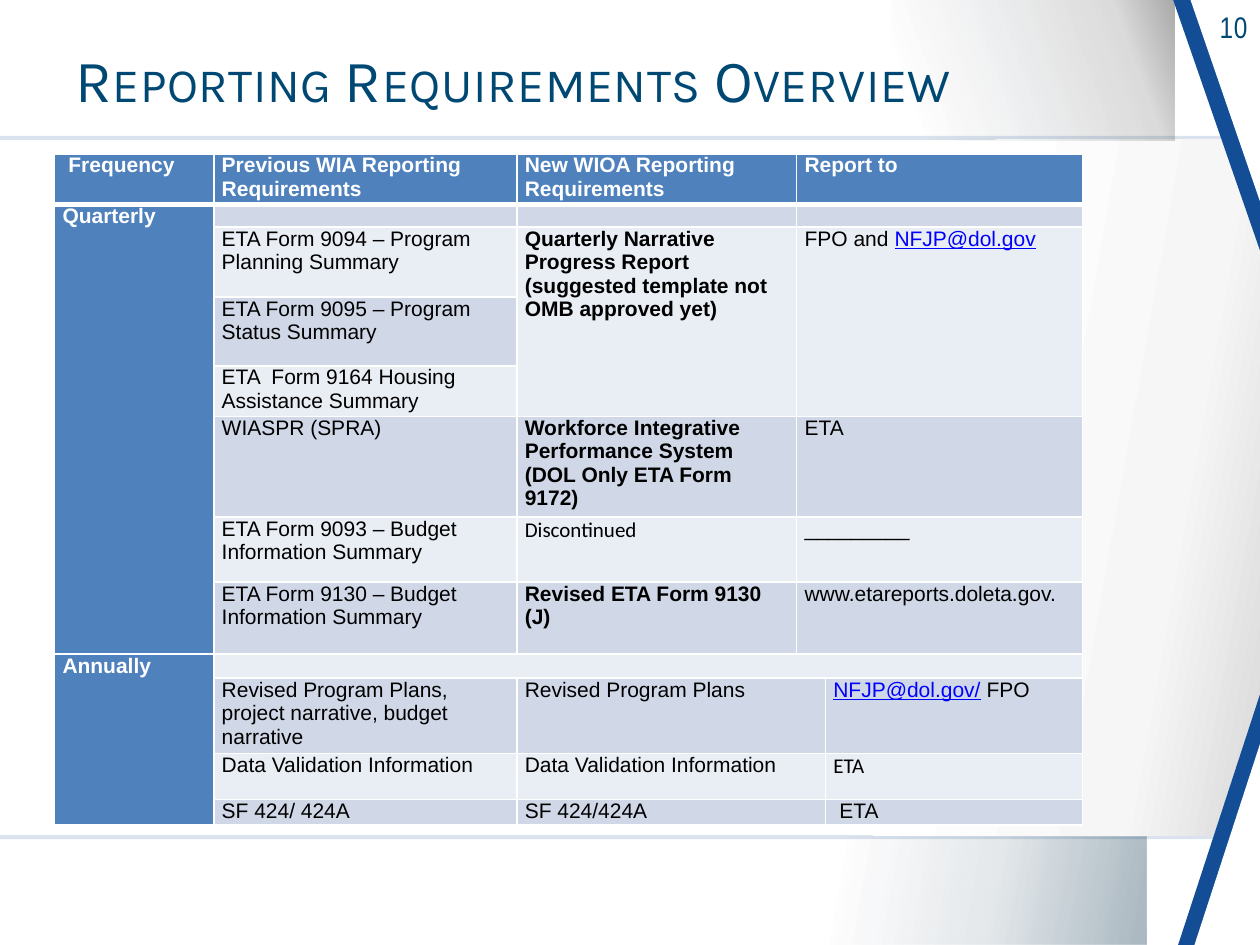
from dataclasses import dataclass

from pptx import Presentation
from pptx.dml.color import RGBColor as RGB
from pptx.enum.shapes import MSO_SHAPE as SHP
from pptx.enum.text import MSO_ANCHOR as ANC, PP_ALIGN as AL
from pptx.oxml import parse_xml
from pptx.oxml.ns import nsdecls
from pptx.util import Cm, Pt


@dataclass(frozen=True)
class Theme:
    ink: str = "004874"
    stripe: str = "124D95"
    rule: str = "275A99"
    head: str = "4F81BD"
    bands: tuple = ("E9EDF4", "D0D8E8")
    link: str = "0000FF"
    white: str = "FFFFFF"
    black: str = "000000"
    title_font: str = "Karla"
    number_font: str = "Arial Narrow"
    body_font: str = "Arial"
    alt_font: str = "Calibri"
    title: float = 34.2
    number: float = 17
    body: float = 12
    empty: float = 10


class Deck:
    def __init__(self, theme, slide):
        self.t = theme
        self.s = slide

    def shape(self, kind, box, color=None):
        sp = self.s.shapes.add_shape(kind, *map(Cm, box))
        sp.shadow.inherit = False
        sp.line.fill.background()
        if color:
            sp.fill.solid()
            sp.fill.fore_color.rgb = RGB.from_string(color)
        return sp

    def rule_band(self, box, opacity):
        sp = self.shape(SHP.RECTANGLE, box)
        self.gradient(sp, [(0, self.t.rule, opacity), (100, self.t.rule, opacity)], 0)

    def gradient(self, sp, stops, angle):
        gs = "".join(
            f'<a:gs pos="{pos * 1000}"><a:srgbClr val="{color}">'
            f'<a:alpha val="{alpha * 1000}"/></a:srgbClr></a:gs>'
            for pos, color, alpha in stops)
        sp.fill.background()
        old = sp._element.spPr.find("{*}noFill")
        old.getparent().replace(old, parse_xml(
            f'<a:gradFill {nsdecls("a")} rotWithShape="1"><a:gsLst>{gs}</a:gsLst>'
            f'<a:lin ang="{angle * 60000}" scaled="0"/></a:gradFill>'))

    def panel(self, box, stops, angle):
        self.gradient(self.shape(SHP.RECTANGLE, box), stops, angle)

    def corner(self, box, color, flip=False):
        sp = self.shape(SHP.ISOSCELES_TRIANGLE, box, color)
        sp.adjustments[0] = 1
        if flip:
            sp._element.spPr.xfrm.set("flipV", "1")

    def run(self, p, text, size, font, color, bold=False, underline=False):
        r = p.add_run()
        r.text = text
        f = r.font
        f.size, f.name, f.bold, f.underline = Pt(size), font, bold, underline
        f.color.rgb = RGB.from_string(color)
        return r

    def text(self, box, text, size, font, align=AL.LEFT, anchor=ANC.TOP,
             spacing=1.0, caps=False):
        tf = self.s.shapes.add_textbox(*map(Cm, box)).text_frame
        tf.word_wrap = True
        tf.vertical_anchor = anchor
        p = tf.paragraphs[0]
        p.alignment, p.line_spacing = align, spacing
        rpr = self.run(p, text, size, font, self.t.ink).font._element
        rpr.set("spc", "40")
        if caps:
            rpr.set("cap", "small")

    def borders(self, cell, top, bottom):
        tcpr = cell._tc.get_or_add_tcPr()
        for side, width in (("L", 1), ("R", 1), ("T", top), ("B", bottom)):
            tcpr.append(parse_xml(
                f'<a:ln{side} {nsdecls("a")} w="{Pt(width)}"><a:solidFill>'
                f'<a:srgbClr val="{self.t.white}"/></a:solidFill></a:ln{side}>'))

    def cell(self, cell, row, col, runs, indent):
        t = self.t
        heading = row == 0 or col == 0
        self.borders(cell, 3 if row == 1 else 1, 3 if row == 0 else 1)
        cell.fill.solid()
        cell.fill.fore_color.rgb = RGB.from_string(t.head if heading else t.bands[row % 2])
        cell.margin_left, cell.margin_right = Cm(0.16 + indent), Cm(0.16)
        cell.margin_top = cell.margin_bottom = 0
        p = cell.text_frame.paragraphs[0]
        if not runs:
            p._p.get_or_add_endParaRPr().set("sz", str(t.empty * 100))
        for text, style in runs:
            color = t.white if heading else t.link if style == "link" else t.black
            self.run(p, text, t.body, t.alt_font if style == "alt" else t.body_font,
                     color, heading or style == "bold", style == "link")

    def table(self, left, top, widths, heights, spans, content, indents):
        tbl = self.s.shapes.add_table(
            len(heights), len(widths), Cm(left), Cm(top),
            Cm(sum(widths)), Cm(sum(heights))).table
        tbl.horz_banding = False
        for column, width in zip(tbl.columns, widths):
            column.width = Cm(width)
        for row, height in zip(tbl.rows, heights):
            row.height = Cm(height)
        for i in range(len(heights)):
            for j in range(len(widths)):
                runs = content.get((i, j), [])
                if isinstance(runs, str):
                    runs = [(runs, "plain")]
                self.cell(tbl.cell(i, j), i, j, runs, indents.get((i, j), 0))
        for first, last in spans:
            tbl.cell(*first).merge(tbl.cell(*last))


COLUMNS = [3.21, 6.11, 5.64, 0.58, 5.18]
ROWS = [0.95, 0.46, 1.41, 1.39, 0.95, 1.89, 1.31, 1.45, 0.48, 1.43, 0.93, 0.46]
SPANS = ([((i, 3), (i, 4)) for i in (0, 1, 5, 6, 7)]
         + [((i, 2), (i, 3)) for i in (9, 10, 11)]
         + [((1, 0), (7, 0)), ((8, 0), (11, 0)), ((8, 1), (8, 4)),
            ((2, 2), (4, 2)), ((2, 3), (4, 4))])
CONTENT = {
    (0, 0): "Frequency",
    (0, 1): "Previous WIA Reporting Requirements",
    (0, 2): "New WIOA Reporting Requirements",
    (0, 3): "Report to",
    (1, 0): "Quarterly",
    (2, 1): "ETA Form 9094 – Program Planning Summary",
    (2, 2): [("Quarterly Narrative Progress Report "
              "(suggested template not OMB approved yet)", "bold")],
    (2, 3): [("FPO and ", "plain"), ("NFJP@dol.gov", "link")],
    (3, 1): "ETA Form 9095 – Program Status Summary",
    (4, 1): "ETA  Form 9164 Housing Assistance Summary",
    (5, 1): "WIASPR (SPRA)",
    (5, 2): [("Workforce Integrative Performance System "
              "(DOL Only ETA Form 9172)", "bold")],
    (5, 3): "ETA",
    (6, 1): "ETA Form 9093 – Budget Information Summary",
    (6, 2): [("Discontinued", "alt")],
    (6, 3): "_________",
    (7, 1): "ETA Form 9130 – Budget Information Summary",
    (7, 2): [("Revised ETA Form 9130 (J)", "bold")],
    (7, 3): "www.etareports.doleta.gov.",
    (8, 0): "Annually",
    (9, 1): "Revised Program Plans, project narrative, budget narrative",
    (9, 2): "Revised Program Plans",
    (9, 4): [("NFJP@dol.gov/", "link"), (" FPO", "plain")],
    (10, 1): "Data Validation Information",
    (10, 2): "Data Validation Information",
    (10, 4): [("ETA", "alt")],
    (11, 1): "SF 424/ 424A",
    (11, 2): "SF 424/424A",
    (11, 4): "ETA",
}
INDENTS = {(0, 0): 0.12, (11, 4): 0.12}


def main():
    prs = Presentation()
    prs.slide_width, prs.slide_height = Cm(25.4), Cm(19.05)
    t = Theme()
    d = Deck(t, prs.slides.add_slide(prs.slide_layouts[6]))

    d.rule_band((0, 2.74, 25.4, 14.18), 16)
    d.panel((0, 2.82, 25.4, 14.02),
            [(0, t.white, 100), (72, t.white, 100), (90, "F6F6F6", 100),
             (100, "D9D9D9", 100)], 10)
    d.panel((16.33, 16.86, 6.79, 2.19),
            [(10, "002C47", 0), (56, "002C47", 11), (100, "002C47", 34)], 10)
    d.panel((17.98, 0, 5.7, 2.83),
            [(10, "002C47", 0), (81, t.black, 14), (100, t.black, 34)], 340)

    d.corner((23.65, 0, 1.75, 5.05), t.stripe, flip=True)
    d.corner((24, 0, 1.4, 4.06), t.white, flip=True)
    d.corner((23.75, 14, 1.65, 5.05), t.stripe)
    d.corner((24.08, 15, 1.32, 4.05), t.white)

    d.text((23.37, 0.05, 2.03, 0.99), "10", t.number, t.number_font, AL.RIGHT)
    d.text((1.27, 0.61, 19.2, 2.16), "Reporting Requirements Overview",
           t.title, t.title_font, anchor=ANC.MIDDLE, spacing=0.85, caps=True)
    d.table(1.1, 3.1, COLUMNS, ROWS, SPANS, CONTENT, INDENTS)
    prs.save("out.pptx")


if __name__ == "__main__":
    main()
